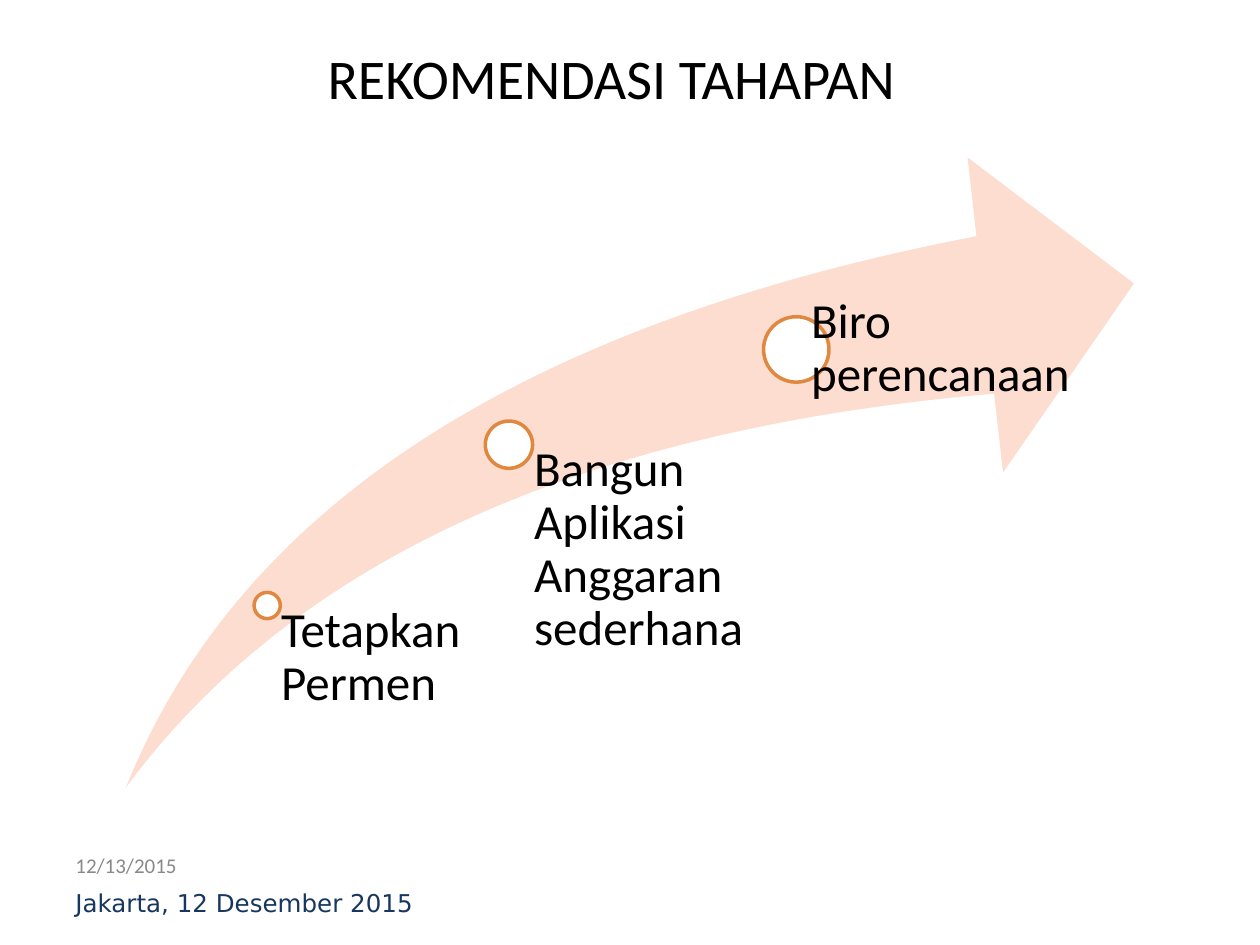
from pptx import Presentation
from pptx import util as u
from pptx.dml.color import RGBColor
from pptx.enum import shapes, text

BLACK, WHITE, GREY, NAVY = "000000", "FFFFFF", "898989", "17375E"
PEACH, ORANGE = "FCDDCF", "E08840"


def color(hex_value):
    return RGBColor.from_string(hex_value)


def write(tf, words, size, hex_value=BLACK, font="Calibri", spacing=None,
          anchor=text.MSO_ANCHOR.TOP, left_inset=None):
    """Put one formatted, left-aligned paragraph into a text frame."""
    tf.word_wrap = True
    tf.auto_size = text.MSO_AUTO_SIZE.NONE
    tf.vertical_anchor = anchor
    if left_inset is not None:
        tf.margin_left = u.Pt(left_inset)
        tf.margin_top = tf.margin_right = tf.margin_bottom = 0
    p = tf.paragraphs[0]
    p.alignment = text.PP_ALIGN.LEFT
    if spacing:
        p.line_spacing = spacing
    r = p.add_run()
    r.text = words
    r.font.name = font
    r.font.size = u.Pt(size)
    r.font.color.rgb = color(hex_value)


class SlideBuilder:
    def __init__(self, prs):
        self.s = prs.slides.add_slide(prs.slide_layouts[5])

    def title(self, words, box):
        sp = self.s.shapes.title
        sp.left, sp.top, sp.width, sp.height = map(u.Pt, box)
        write(sp.text_frame, words, 32, anchor=text.MSO_ANCHOR.MIDDLE)

    def label(self, words, box, size, **style):
        sp = self.s.shapes.add_textbox(*map(u.Pt, box))
        write(sp.text_frame, words, size, **style)

    def shape(self, kind, box, fill, line=None):
        sp = self.s.shapes.add_shape(kind, *map(u.Pt, box))
        sp.shadow.inherit = False
        sp.fill.solid()
        sp.fill.fore_color.rgb = color(fill)
        if line:
            sp.line.color.rgb = color(line)
            sp.line.width = u.Pt(2)
        else:
            sp.line.fill.background()
        return sp

    def step(self, words, circle, box, inset):
        x, y, diameter = circle
        self.shape(shapes.MSO_SHAPE.OVAL, (x, y, diameter, diameter), WHITE, ORANGE)
        self.label(words, box, 28, spacing=0.9, left_inset=inset)


def main():
    prs = Presentation()
    prs.slide_width, prs.slide_height = u.Pt(720), u.Pt(540)
    slide = SlideBuilder(prs)

    # Title, place and date
    slide.label("Jakarta, 12 Desember 2015", (36, 504, 594, 24.5), 14,
                hex_value=NAVY, font="DejaVu Sans")
    slide.title("REKOMENDASI TAHAPAN", (180, 21.6, 540 - 36, 44.6))
    slide.label("12/13/2015", (36, 480.2, 168, 28.8), 12,
                hex_value=GREY, anchor=text.MSO_ANCHOR.MIDDLE)

    # Rising arrow
    arrow = slide.shape(shapes.MSO_SHAPE.SWOOSH_ARROW, (72, 90, 576, 360), PEACH)
    arrow.adjustments[0] = arrow.adjustments[1] = 0.25

    # Steps: words, circle (x, y, diameter), text box, left inset
    steps = [
        ("Tetapkan Permen", (145.2, 338.5, 15), (152.7, 346, 134.2, 104), 8),
        ("Bangun Aplikasi Anggaran sederhana", (277.3, 240.6, 27),
         (290.8, 254, 138.2, 196), 14.4),
        ("Biro perencanaan", (436.3, 181, 37.4), (443.5, 169.2, 204.5, 250.6), 20),
    ]
    for step in steps:
        slide.step(*step)

    prs.save("out.pptx")


if __name__ == "__main__":
    main()
